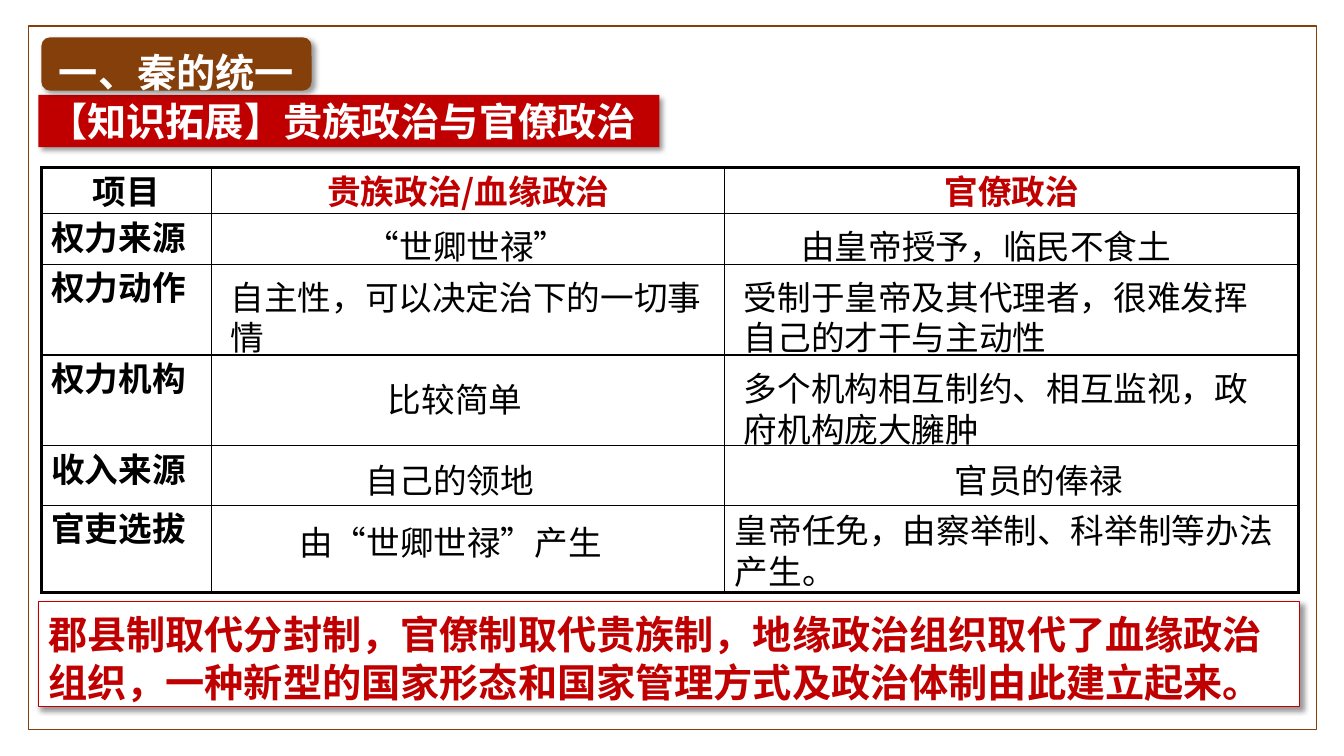
from lxml import etree
from pptx import Presentation
from pptx.dml.color import RGBColor
from pptx.enum.shapes import MSO_SHAPE
from pptx.enum.text import MSO_ANCHOR, MSO_AUTO_SIZE, PP_ALIGN
from pptx.oxml.ns import qn
from pptx.util import Inches, Pt

RECT, ROUNDED = MSO_SHAPE.RECTANGLE, MSO_SHAPE.ROUNDED_RECTANGLE
LEFT, CENTER = PP_ALIGN.LEFT, PP_ALIGN.CENTER
TOP, NO_FIT = MSO_ANCHOR.TOP, MSO_AUTO_SIZE.NONE
TITLE_ONLY = 5

BLACK = RGBColor(0x00, 0x00, 0x00)
WHITE = RGBColor(0xFF, 0xFF, 0xFF)
RED = RGBColor(0xC0, 0x00, 0x00)
BROWN = RGBColor(0x84, 0x3F, 0x0B)

COLUMNS = [1.69, 5.09, 5.69]
ROWS = [0.46, 0.5, 0.9, 0.9, 0.59, 0.87]
HEADERS = [("项目", BLACK), ("贵族政治/血缘政治", RED), ("官僚政治", RED)]
LABELS = ["权力来源", "权力动作", "权力机构", "收入来源", "官吏选拔"]
ENTRIES = [
    ("“世卿世禄”", 3.53, 2.16, 2.66, 0.5),
    ("由皇帝授予，临民不食土", 7.85, 2.16, 4.04, 0.5),
    ("自主性，可以决定治下的一切事情", 2.19, 2.66, 5, 0.91),
    ("受制于皇帝及其代理者，很难发挥自己的才干与主动性", 7.28, 2.66, 5.4, 0.91),
    ("比较简单", 3.75, 3.68, 1.64, 0.5),
    ("多个机构相互制约、相互监视，政府机构庞大臃肿", 7.28, 3.57, 5.51, 0.91),
    ("自己的领地", 3.53, 4.48, 2.13, 0.5),
    ("官员的俸禄", 9.37, 4.48, 3.01, 0.5),
    ("由“世卿世禄”产生", 2.87, 5.1, 3.56, 0.5),
    ("皇帝任免，由察举制、科举制等办法产生。", 7.19, 4.98, 5.78, 0.91),
]
CONCLUSION = ("郡县制取代分封制，官僚制取代贵族制，地缘政治组织取代了血缘政治组织，"
              "一种新型的国家形态和国家管理方式及政治体制由此建立起来。")


class SlideBuilder:
    """Draws styled elements on the current slide."""

    font = "Noto Sans CJK SC"

    def __init__(self, deck):
        self.page = deck.slides.add_slide(deck.slide_layouts[TITLE_ONLY])

    def add_words(self, frame, text, size, color, bold=False, align=LEFT, spacing=1.0):
        para = frame.paragraphs[0]
        para.alignment = align
        para.line_spacing = Pt(round(size * 1.2 * spacing))
        para.space_before = Pt(0)
        span = para.add_run()
        span.text = text
        span.font.name = self.font
        span.font.size = Pt(size)
        span.font.bold = bold
        span.font.color.rgb = color

    def fit(self, frame):
        frame.word_wrap = True
        frame.auto_size = NO_FIT
        frame.vertical_anchor = TOP
        frame.margin_left = frame.margin_right = Inches(0.1)
        frame.margin_top, frame.margin_bottom = Inches(0.08), Inches(0)

    def paint(self, shape, fill=None, line=None, shadow=False):
        if fill is None:
            shape.fill.background()
        else:
            shape.fill.solid()
            shape.fill.fore_color.rgb = fill
        if line is None:
            shape.line.fill.background()
        else:
            shape.line.color.rgb = line
            shape.line.width = Pt(1)
        shape.shadow.inherit = False
        if shadow:
            effects = shape.element.spPr.find(qn("a:effectLst"))
            outer = etree.SubElement(effects, qn("a:outerShdw"), blurRad=str(Pt(4)),
                                     dist=str(Pt(3)), dir="2700000", algn="tl", rotWithShape="0")
            tint = etree.SubElement(outer, qn("a:srgbClr"), val=str(BLACK))
            etree.SubElement(tint, qn("a:alpha"), val="40000")

    def title(self, text, left, top, width, height):
        box = self.page.shapes.title
        box.left, box.top = Inches(left), Inches(top)
        box.width, box.height = Inches(width), Inches(height)
        self.paint(box, RED, shadow=True)
        self.fit(box.text_frame)
        self.add_words(box.text_frame, text, 28, WHITE, bold=True, spacing=0.9)

    def shape(self, kind, left, top, width, height, **style):
        box = self.page.shapes.add_shape(kind, Inches(left), Inches(top), Inches(width), Inches(height))
        self.paint(box, **style)
        self.fit(box.text_frame)
        return box.text_frame

    def text(self, text, left, top, width, height):
        box = self.page.shapes.add_textbox(Inches(left), Inches(top), Inches(width), Inches(height))
        self.fit(box.text_frame)
        self.add_words(box.text_frame, text, 24, BLACK)

    def border(self, cell_element, thick_sides):
        props = cell_element.get_or_add_tcPr()
        for index, side in enumerate(["lnL", "lnR", "lnT", "lnB"]):
            width = Pt(2.25) if side in thick_sides else Pt(1)
            line = etree.Element(qn("a:" + side), w=str(width))
            fill = etree.SubElement(line, qn("a:solidFill"))
            etree.SubElement(fill, qn("a:srgbClr"), val=str(BLACK))
            props.insert(index, line)

    def table(self, left, top):
        frame = self.page.shapes.add_table(len(ROWS), len(COLUMNS), Inches(left), Inches(top),
                                           Inches(sum(COLUMNS)), Inches(sum(ROWS)))
        grid = frame.table
        grid.first_row = grid.horz_banding = False
        for column, width in zip(grid.columns, COLUMNS):
            column.width = Inches(width)
        for row, height in zip(grid.rows, ROWS):
            row.height = Inches(height)
        for cell in grid.iter_cells():
            cell.fill.background()
            cell.margin_top, cell.margin_bottom = Inches(0.1), Inches(0)
        for index, (text, color) in enumerate(HEADERS):
            self.add_words(grid.cell(0, index).text_frame, text, 24, color, True, CENTER, 0.9)
        for index, text in enumerate(LABELS, 1):
            self.add_words(grid.cell(index, 0).text_frame, text, 24, BLACK, True, LEFT, 0.9)
        for index, cell_element in enumerate(frame.element.iter(qn("a:tc"))):
            row, column = divmod(index, len(COLUMNS))
            edges = {"lnL": column == 0, "lnR": column == len(COLUMNS) - 1,
                     "lnT": row == 0, "lnB": row == len(ROWS) - 1}
            self.border(cell_element, [side for side, outer in edges.items() if outer])

    def set_east_asian_font(self):
        for latin in list(self.page.element.iter(qn("a:latin"))):
            latin.addnext(etree.Element(qn("a:ea"), typeface=self.font))


def main():
    deck = Presentation()
    deck.slide_width, deck.slide_height = Inches(13.33), Inches(7.5)
    builder = SlideBuilder(deck)
    builder.shape(RECT, 0.28, 0.26, 12.78, 6.98, line=BROWN)
    section = builder.shape(ROUNDED, 0.41, 0.37, 2.68, 0.53, fill=BROWN, shadow=True)
    builder.add_words(section, "一、秦的统一", 28, WHITE, bold=True, align=CENTER)
    builder.title("【知识拓展】贵族政治与官僚政治", 0.38, 0.94, 6.16, 0.52)
    builder.table(0.41, 1.66)
    for entry in ENTRIES:
        builder.text(*entry)
    conclusion = builder.shape(RECT, 0.38, 5.97, 12.51, 1.04, fill=WHITE, line=RED, shadow=True)
    builder.add_words(conclusion, CONCLUSION, 28, RED, bold=True)
    builder.set_east_asian_font()
    deck.save("out.pptx")


if __name__ == "__main__":
    main()
